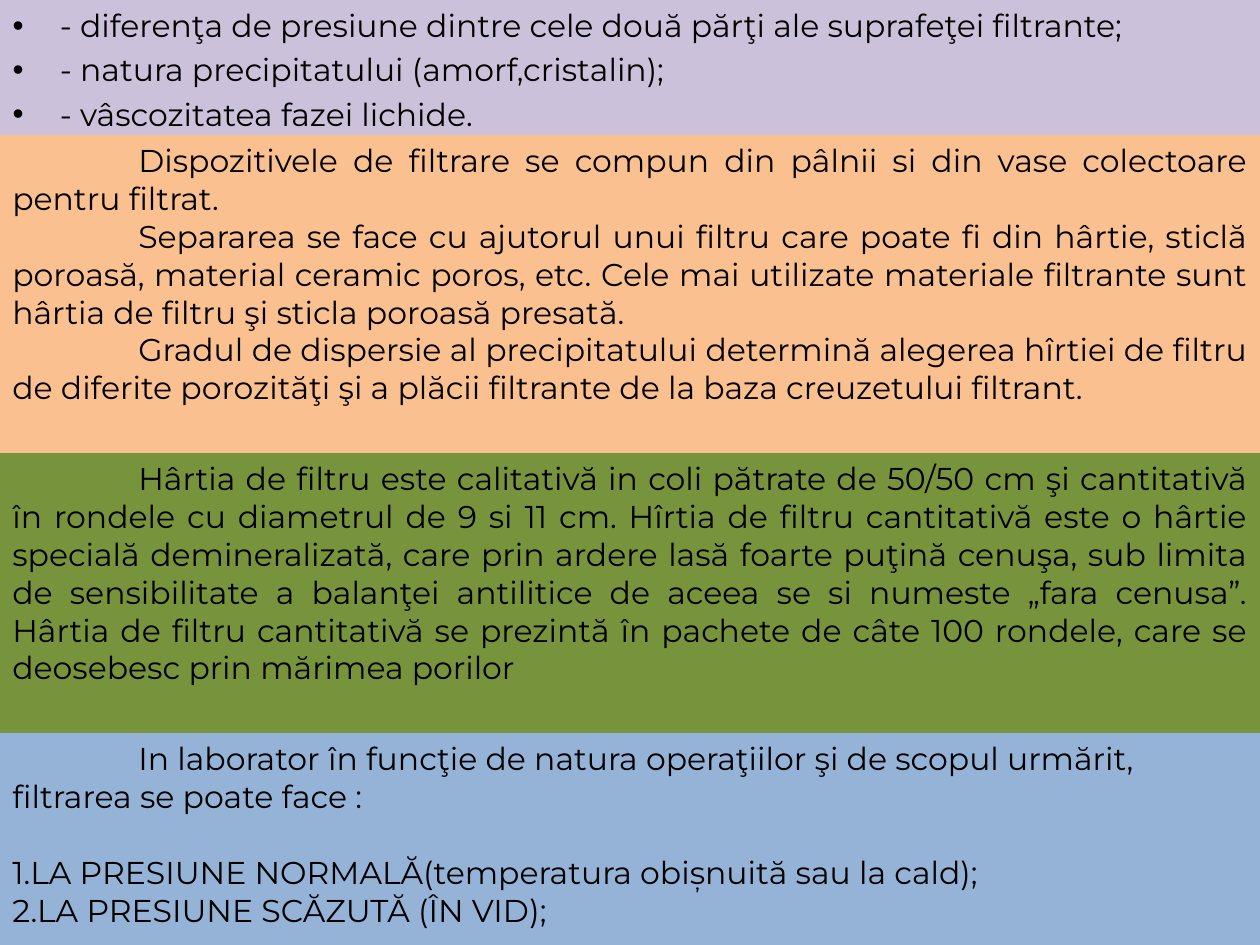
"""Build the slide on filtration factors, devices, paper and methods."""
from dataclasses import dataclass

from lxml.etree import SubElement
from pptx import Presentation
from pptx.dml.color import RGBColor
from pptx.enum.text import MSO_ANCHOR, MSO_AUTO_SIZE, PP_ALIGN
from pptx.oxml.ns import qn
from pptx.slide import Slide
from pptx.util import Pt

COLOURS = {
    "text": "000000",
    "factors": "CCC1DA",
    "devices": "FAC090",
    "paper": "77933C",
    "methods": "95B3D7",
}
WIDTH, HEIGHT = 720, 540

FACTORS = [
    [("- diferenţa de presiune dintre cele două părţi ale suprafeţei filtrante;", False)],
    [("-", True), (" natura precipitatului (amorf,cristalin);", False)],
    [("- vâscozitatea fazei lichide.", False)],
]
DEVICES = [
    "Dispozitivele de filtrare se compun din pâlnii si din vase colectoare pentru filtrat.",
    "Separarea se face cu ajutorul unui filtru care poate fi din hârtie, sticlă poroasă, "
    "material ceramic poros, etc. Cele mai utilizate materiale filtrante sunt hârtia de "
    "filtru şi sticla poroasă presată.",
    "Gradul de dispersie al precipitatului determină alegerea hîrtiei de filtru de diferite "
    "porozităţi şi a plăcii filtrante de la baza creuzetului filtrant.",
]
PAPER = [
    "Hârtia de filtru este calitativă in coli pătrate de 50/50 cm şi cantitativă în rondele "
    "cu diametrul de 9 si 11 cm. Hîrtia de filtru cantitativă este o hârtie specială "
    "demineralizată, care prin ardere lasă foarte puţină cenuşa, sub limita de sensibilitate "
    "a balanţei antilitice de aceea se si numeste „fara cenusa”. Hârtia de filtru cantitativă "
    "se prezintă în pachete de câte 100 rondele, care se deosebesc prin mărimea porilor",
]
METHODS_INTRO = (
    "In laborator în funcţie de natura operaţiilor şi de scopul urmărit, "
    "filtrarea se poate face :"
)
METHODS = [
    "1.LA PRESIUNE NORMALĂ(temperatura obișnuită sau la cald);",
    "2.LA PRESIUNE SCĂZUTĂ (ÎN VID);",
]


@dataclass
class FiltrationSlide:
    """Hold the text style and the slide being filled."""

    slide: Slide
    font: str = "Montserrat"
    size: float = 18
    first_line: float = 72
    hanging: float = 27

    def band(self, shape, topic, top, height):
        """Place a full-width coloured band and return its text frame."""
        shape.left, shape.top = Pt(0), Pt(top)
        shape.width, shape.height = Pt(WIDTH), Pt(height)
        shape.fill.solid()
        shape.fill.fore_color.rgb = RGBColor.from_string(COLOURS[topic])
        frame = shape.text_frame
        frame.word_wrap = True
        frame.auto_size = MSO_AUTO_SIZE.NONE
        frame.vertical_anchor = MSO_ANCHOR.TOP
        return frame

    def paragraph(self, frame, runs, align, before=0, margin=0, indent=0, bullet=None):
        """Write one paragraph of (text, italic) runs."""
        first = frame.paragraphs[0]
        paragraph = first if not first.runs else frame.add_paragraph()
        paragraph.alignment = align
        paragraph.space_before = Pt(before)
        properties = paragraph._p.get_or_add_pPr()
        properties.set("marL", str(Pt(margin)))
        properties.set("indent", str(Pt(indent)))
        if bullet:
            SubElement(properties, qn("a:buFont"), typeface="Arial")
            SubElement(properties, qn("a:buChar"), char=bullet)
        paragraph.font.name = self.font
        paragraph.font.size = Pt(self.size)
        paragraph.font.color.rgb = RGBColor.from_string(COLOURS["text"])
        for text, italic in runs:
            run = paragraph.add_run()
            run.text = text
            if italic:
                run.font.italic = True

    def bullets(self, topic, top, height, items):
        """Fill the body placeholder with a bulleted list."""
        frame = self.band(self.slide.placeholders[1], topic, top, height)
        for number, runs in enumerate(items):
            self.paragraph(frame, runs, PP_ALIGN.JUSTIFY, 0.2 * self.size if number else 0,
                           self.hanging, -self.hanging, "•")

    def prose(self, topic, top, height, texts, align=PP_ALIGN.JUSTIFY):
        """Add a band of paragraphs with an indented first line."""
        box = self.slide.shapes.add_textbox(0, 0, Pt(WIDTH), Pt(height))
        frame = self.band(box, topic, top, height)
        for text in texts:
            self.paragraph(frame, [(text, False)], align, indent=self.first_line)
        return frame

    def numbered(self, frame, texts, gap):
        """Append flush-left lines, set apart from the text above."""
        for number, text in enumerate(texts):
            self.paragraph(frame, [(text, False)], PP_ALIGN.LEFT, 0 if number else gap)


def main():
    """Build and save the presentation."""
    deck = Presentation()
    deck.slide_width, deck.slide_height = Pt(WIDTH), Pt(HEIGHT)
    slide = deck.slides.add_slide(deck.slide_layouts[1])
    title = slide.shapes.title._element
    title.getparent().remove(title)

    filtration = FiltrationSlide(slide)
    filtration.bullets("factors", 0, 90.7, FACTORS)
    filtration.prose("devices", 77.3, 181.7, DEVICES)
    filtration.prose("paper", 259, 181.7, PAPER)
    methods = filtration.prose("methods", 418.8, 138, [METHODS_INTRO], PP_ALIGN.LEFT)
    filtration.numbered(methods, METHODS, gap=21.8)
    deck.save("out.pptx")


if __name__ == "__main__":
    main()
